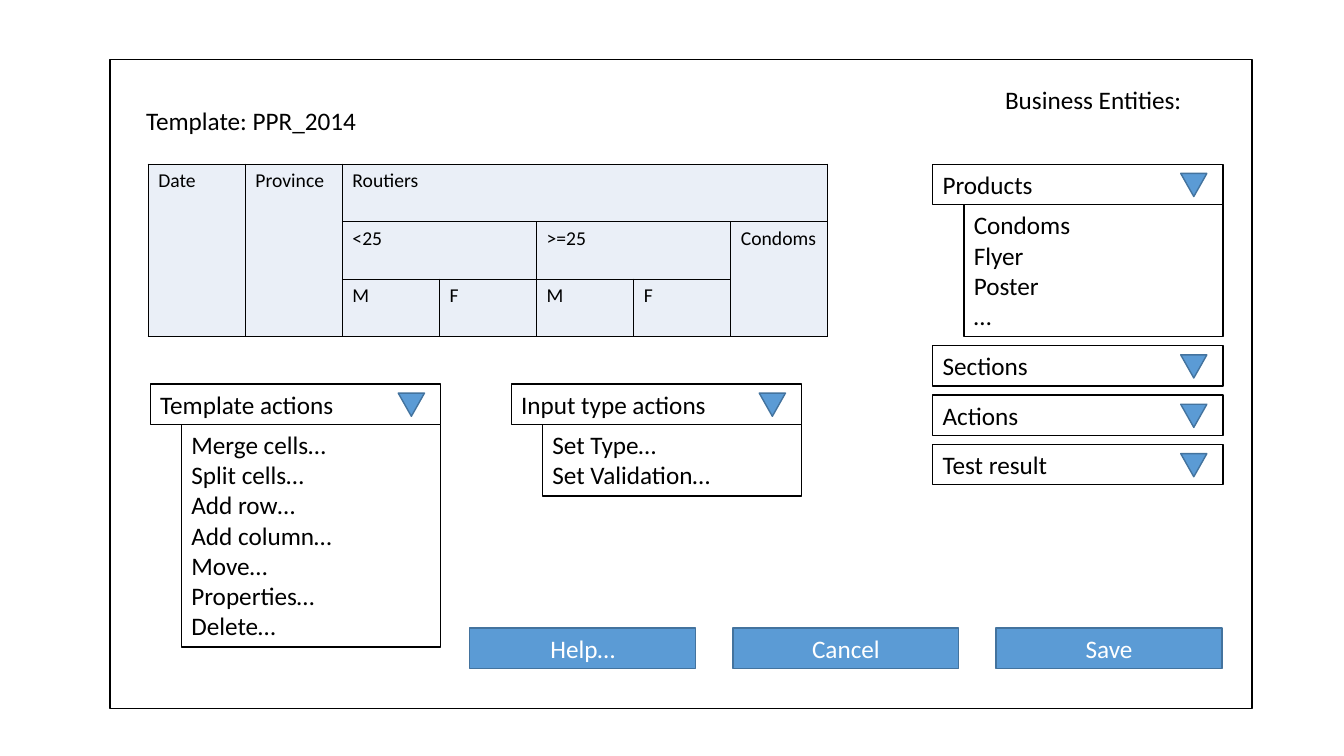
from dataclasses import dataclass

from lxml import etree
from pptx import Presentation
from pptx.dml.color import RGBColor
from pptx.enum.shapes import MSO_SHAPE
from pptx.enum.text import MSO_ANCHOR, MSO_AUTO_SIZE, PP_ALIGN
from pptx.oxml.ns import qn
from pptx.util import Inches, Pt

RECTANGLE = MSO_SHAPE.RECTANGLE
TRIANGLE = MSO_SHAPE.ISOSCELES_TRIANGLE
TOP = MSO_ANCHOR.TOP
GROW = MSO_AUTO_SIZE.SHAPE_TO_FIT_TEXT
LEFT = PP_ALIGN.LEFT
CENTER = PP_ALIGN.CENTER

BLACK = RGBColor(0x00, 0x00, 0x00)
WHITE = RGBColor(0xFF, 0xFF, 0xFF)
BLUE = RGBColor(0x5B, 0x9B, 0xD5)
DARK_BLUE = RGBColor(0x43, 0x73, 0x9E)
PALE_BLUE = RGBColor(0xEA, 0xEF, 0xF7)

FONT = "Calibri"
BAR_HEIGHT = 0.4
COLUMN_WIDTH = 0.963
ROW_HEIGHT = 0.57


@dataclass(frozen=True)
class Dropdown:
    left: float
    top: float
    title: str
    options: tuple[str, ...] = ()


@dataclass(frozen=True)
class Label:
    left: float
    top: float
    width: float
    text: str


@dataclass(frozen=True)
class HeaderCell:
    row: int
    column: int
    text: str
    row_span: int = 1
    column_span: int = 1


DROPDOWNS = (
    Dropdown(9.25, 1.63, "Products", ("Condoms", "Flyer", "Poster", "…")),
    *(Dropdown(9.25, 3.43 + 0.49 * index, title)
      for index, title in enumerate(("Sections", "Actions", "Test result"))),
    Dropdown(1.49, 3.81, "Template actions",
             ("Merge cells…", "Split cells…", "Add row…", "Add column…",
              "Move…", "Properties…", "Delete…")),
    Dropdown(5.07, 3.81, "Input type actions", ("Set Type…", "Set Validation…")),
)
LABELS = (
    Label(9.87, 0.79, 1.97, "Business Entities:"),
    Label(1.35, 1.0, 2.31, "Template: PPR_2014"),
)
HEADER_CELLS = (
    HeaderCell(0, 0, "Date", row_span=3),
    HeaderCell(0, 1, "Province", row_span=3),
    HeaderCell(0, 2, "Routiers", column_span=5),
    HeaderCell(1, 2, "<25", column_span=2),
    HeaderCell(1, 4, ">=25", column_span=2),
    HeaderCell(1, 6, "Condoms", row_span=2),
    *(HeaderCell(2, column, text) for column, text in enumerate("MFMF", start=2)),
)
BUTTONS = ("Help…", "Cancel", "Save")


def write_lines(frame, lines, size=18, color=BLACK, align=LEFT) -> None:
    for index, line in enumerate(lines):
        para = frame.add_paragraph() if index else frame.paragraphs[0]
        para.alignment = align
        span = para.add_run()
        span.text = line
        span.font.name = FONT
        span.font.size = Pt(size)
        span.font.color.rgb = color


def add_box(page, kind, left: float, top: float, width: float, height: float,
            fill=WHITE, line=BLACK):
    box = page.shapes.add_shape(kind, Inches(left), Inches(top),
                                Inches(width), Inches(height))
    box.shadow.inherit = False
    box.fill.solid()
    box.fill.fore_color.rgb = fill
    box.line.color.rgb = line
    box.line.width = Pt(1)
    return box


def fill_box(box, lines, color=BLACK, align=LEFT) -> None:
    frame = box.text_frame
    frame.word_wrap = True
    frame.auto_size = GROW
    frame.vertical_anchor = TOP
    write_lines(frame, lines, color=color, align=align)


def add_dropdown(page, item: Dropdown) -> None:
    bar = add_box(page, RECTANGLE, item.left, item.top, 2.88, BAR_HEIGHT)
    fill_box(bar, (item.title,))
    arrow = add_box(page, TRIANGLE, item.left + 2.46, item.top + 0.09,
                    0.26, 0.23, BLUE, DARK_BLUE)
    arrow.rotation = 180
    if item.options:
        height = 0.11 + 0.3 * len(item.options)
        menu = add_box(page, RECTANGLE, item.left + 0.31, item.top + BAR_HEIGHT,
                       2.57, height)
        fill_box(menu, item.options)


def add_label(page, label: Label) -> None:
    box = page.shapes.add_textbox(Inches(label.left), Inches(label.top),
                                  Inches(label.width), Inches(BAR_HEIGHT))
    box.text_frame.word_wrap = False
    box.text_frame.auto_size = GROW
    write_lines(box.text_frame, (label.text,))


def style_cell(cell) -> None:
    properties = cell._tc.get_or_add_tcPr()
    for side in ("a:lnL", "a:lnR", "a:lnT", "a:lnB"):
        border = etree.SubElement(properties, qn(side), w=str(Pt(1)))
        solid = etree.SubElement(border, qn("a:solidFill"))
        etree.SubElement(solid, qn("a:srgbClr"), val=str(BLACK))
    cell.fill.solid()
    cell.fill.fore_color.rgb = PALE_BLUE


def add_header_table(page) -> None:
    table = page.shapes.add_table(3, 7, Inches(1.47), Inches(1.63),
                                  Inches(7 * COLUMN_WIDTH),
                                  Inches(3 * ROW_HEIGHT)).table
    for column in table.columns:
        column.width = Inches(COLUMN_WIDTH)
    for row in table.rows:
        row.height = Inches(ROW_HEIGHT)
    for cell in table.iter_cells():
        style_cell(cell)
    for item in HEADER_CELLS:
        cell = table.cell(item.row, item.column)
        if item.row_span > 1 or item.column_span > 1:
            cell.merge(table.cell(item.row + item.row_span - 1,
                                  item.column + item.column_span - 1))
        write_lines(cell.text_frame, (item.text,), size=14)


def main() -> None:
    deck = Presentation()
    deck.slide_width = Inches(13.33)
    deck.slide_height = Inches(7.5)
    page = deck.slides.add_slide(deck.slide_layouts[6])
    add_box(page, RECTANGLE, 1.09, 0.59, 11.33, 6.44)
    for label in LABELS:
        add_label(page, label)
    for item in DROPDOWNS:
        add_dropdown(page, item)
    add_header_table(page)
    for index, caption in enumerate(BUTTONS):
        button = add_box(page, RECTANGLE, 4.66 + 2.61 * index, 6.23,
                         2.24, BAR_HEIGHT, BLUE, DARK_BLUE)
        fill_box(button, (caption,), WHITE, CENTER)
    deck.save("out.pptx")


if __name__ == "__main__":
    main()
